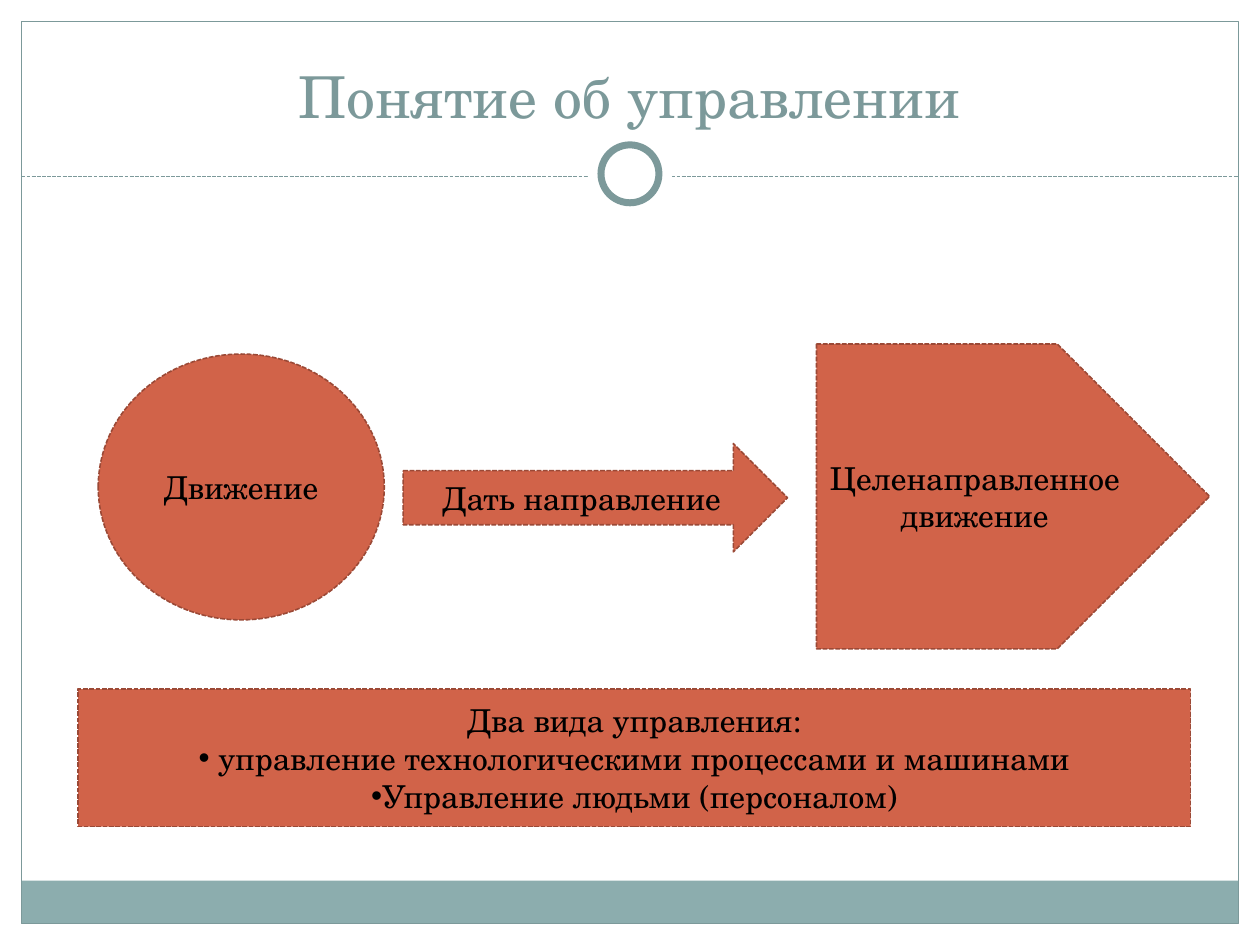
import pptx
import pptx.util
import pptx.oxml
import pptx.oxml.ns
from dataclasses import dataclass
from pptx.dml.color import RGBColor
from pptx.enum.dml import MSO_LINE
from pptx.enum.shapes import MSO_CONNECTOR, MSO_SHAPE
from pptx.enum.text import MSO_ANCHOR, PP_ALIGN
from pptx.util import Inches


@dataclass(frozen=True)
class Theme:
    white: str = "FFFFFF"
    black: str = "000000"
    frame: str = "7C999A"
    band: str = "8CADAE"
    block: str = "D16349"
    block_line: str = "9B4936"
    font: str = "TeX Gyre Schola"
    title_size: float = 33
    body_size: float = 18


THEME = Theme()


def color(value):
    return RGBColor.from_string(value)


def style_line(line, line_color, width, dashed=False):
    line.color.rgb = color(line_color)
    line.width = pptx.util.Pt(width)
    if dashed:
        line.dash_style = MSO_LINE.SQUARE_DOT


def add_panel(slide, preset, box, fill=None, line=None):
    shape = slide.shapes.add_shape(preset, *map(Inches, box))
    shape.shadow.inherit = False
    if fill:
        shape.fill.solid()
        shape.fill.fore_color.rgb = color(fill)
    else:
        shape.fill.background()
    if line:
        style_line(shape.line, *line)
    else:
        shape.line.fill.background()
    return shape


def add_bullet(paragraph):
    properties = paragraph._p.get_or_add_pPr()
    for name, value in {"marL": "0", "indent": "0"}.items():
        properties.set(name, value)
    font = pptx.oxml.parse_xml(
        f'<a:buFont {pptx.oxml.ns.nsdecls("a")} typeface="Arial"/>')
    bullet = pptx.oxml.parse_xml(
        f'<a:buChar {pptx.oxml.ns.nsdecls("a")} char="•"/>')
    properties.extend([font, bullet])


def write_text(shape, lines, size, text_color, anchor, bullets_from=None):
    frame = shape.text_frame
    frame.word_wrap = True
    frame.vertical_anchor = anchor
    font_format = {"name": THEME.font, "size": pptx.util.Pt(size)}
    for index, text in enumerate(lines):
        paragraph = frame.add_paragraph() if index else frame.paragraphs[0]
        paragraph.alignment = PP_ALIGN.CENTER
        if bullets_from is not None and index >= bullets_from:
            add_bullet(paragraph)
        run = paragraph.add_run()
        run.text = text
        for name, value in font_format.items():
            setattr(run.font, name, value)
        run.font.color.rgb = color(text_color)


def add_frame(slide, box):
    left, top, width, height = box
    band_height = 0.34
    add_panel(slide, MSO_SHAPE.RECTANGLE,
              (left, top + height - band_height, width, band_height), THEME.band)
    add_panel(slide, MSO_SHAPE.RECTANGLE, box, line=(THEME.frame, 0.75))


def add_header(slide, box, title):
    left, top, width, height = box
    center, bottom = left + width / 2, top + height
    divider = slide.shapes.add_connector(
        MSO_CONNECTOR.STRAIGHT,
        *map(Inches, (left, bottom, left + width, bottom)))
    style_line(divider.line, THEME.frame, 0.75, True)
    divider._element.spPr.append(pptx.oxml.parse_xml(
        f'<a:effectLst {pptx.oxml.ns.nsdecls("a")}/>'))
    for diameter, line in ((0.67, None), (0.46, (THEME.frame, 4))):
        add_panel(slide, MSO_SHAPE.OVAL,
                  (center - diameter / 2, bottom - 0.02 - diameter / 2,
                   diameter, diameter), THEME.white, line)
    text_box = slide.shapes.add_textbox(
        *map(Inches, (left + 0.16, top + 0.08, width - 0.32, 0.83)))
    write_text(text_box, [title], THEME.title_size, THEME.frame, MSO_ANCHOR.BOTTOM)


def add_block(slide, preset, box, lines, bullets_from=None):
    shape = add_panel(slide, preset, box, THEME.block,
                      (THEME.block_line, 0.9, True))
    write_text(shape, lines, THEME.body_size, THEME.black,
               MSO_ANCHOR.MIDDLE, bullets_from)


def add_process(slide, box):
    left, top, width, height = box
    steps = (
        (MSO_SHAPE.OVAL, 0, 0.08, 2.27, 2.11, "Движение"),
        (MSO_SHAPE.RIGHT_ARROW, 2.42, 0.79, 3.05, 0.86, "Дать направление"),
        (MSO_SHAPE.PENTAGON, width - 3.12, 0, 3.12, height,
         "Целенаправленное движение"),
    )
    for preset, x, y, step_width, step_height, text in steps:
        add_block(slide, preset, (left + x, top + y, step_width, step_height), [text])


def add_kinds(slide, box):
    add_block(slide, MSO_SHAPE.RECTANGLE, box, [
        "Два вида управления:",
        " управление технологическими процессами и машинами",
        "Управление людьми (персоналом)",
    ], bullets_from=1)


def main():
    presentation = pptx.Presentation()
    presentation.slide_width = Inches(10)
    presentation.slide_height = Inches(7.5)
    slide = presentation.slides.add_slide(presentation.slide_layouts[6])
    add_frame(slide, (0.17, 0.17, 9.66, 7.16))
    add_header(slide, (0.17, 0.17, 9.66, 1.23), "Понятие об управлении")
    add_process(slide, (0.78, 2.73, 8.82, 2.42))
    add_kinds(slide, (0.62, 5.47, 8.83, 1.09))
    presentation.save("out.pptx")


if __name__ == "__main__":
    main()
